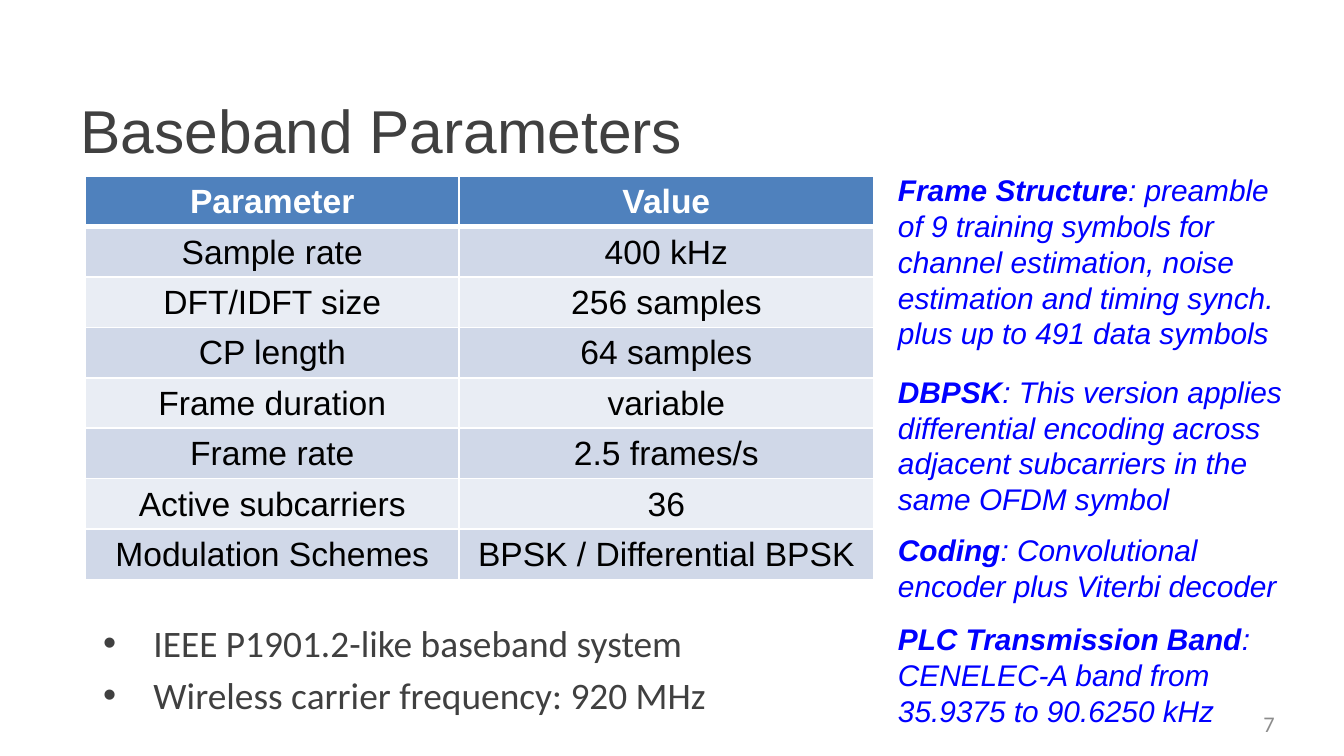
from lxml.etree import SubElement
from pptx import Presentation
from pptx.dml.color import RGBColor
from pptx.enum.text import MSO_ANCHOR as Anchor, MSO_AUTO_SIZE as AutoSize, PP_ALIGN as Align
from pptx.oxml.ns import qn
from pptx.util import Pt

PX = 9525
COLORS = {
    "text": "404040", "note": "0000FF", "number": "8C8C8C", "header": "4F81BD",
    "odd": "D0D8E8", "even": "E9EDF4", "white": "FFFFFF", "black": "000000",
}


class Deck:
    heading_font = "Arial"
    body_font = "Calibri"

    def __init__(self, width, height):
        self.presentation = Presentation()
        self.presentation.slide_width = width * PX
        self.presentation.slide_height = height * PX
        self.slide = self.presentation.slides.add_slide(self.presentation.slide_layouts[1])

    def place(self, shape, box):
        shape.left, shape.top, shape.width, shape.height = (n * PX for n in box)

    def run(self, paragraph, text, size, color, font, bold=False, italic=False):
        run = paragraph.add_run()
        run.text = text
        run.font.size = Pt(size)
        run.font.name = font
        run.font.bold = bold
        run.font.italic = italic
        run.font.color.rgb = RGBColor.from_string(COLORS[color])

    def title(self, text, box):
        heading = self.slide.shapes.title
        self.place(heading, box)
        frame = heading.text_frame
        frame.auto_size = AutoSize.NONE
        frame.vertical_anchor = Anchor.MIDDLE
        frame.paragraphs[0].alignment = Align.LEFT
        self.run(frame.paragraphs[0], text, 32.4, "text", self.heading_font)

    def bullets(self, items, box):
        body = self.slide.placeholders[1]
        self.place(body, box)
        frame = body.text_frame
        frame.auto_size = AutoSize.NONE
        for index, item in enumerate(items):
            paragraph = frame.add_paragraph() if index else frame.paragraphs[0]
            properties = paragraph._p.get_or_add_pPr()
            properties.set("marL", str(36 * PX))
            properties.set("indent", str(-36 * PX))
            SubElement(properties, qn("a:buFont"), typeface="Arial")
            SubElement(properties, qn("a:buChar"), char="•")
            paragraph.space_before = Pt(4 if index else 0)
            self.run(paragraph, item, 20, "text", self.body_font)

    def border(self, cell, side, width):
        line = SubElement(cell._tc.get_or_add_tcPr(), qn(f"a:{side}"), w=str(Pt(width)))
        fill = SubElement(line, qn("a:solidFill"))
        SubElement(fill, qn("a:srgbClr"), val=COLORS["white"])

    def table(self, rows, left, top, widths, row_height):
        frame = self.slide.shapes.add_table(
            len(rows), len(widths), left * PX, top * PX,
            sum(widths) * PX, row_height * len(rows) * PX)
        grid = frame.table
        for column, width in zip(grid.columns, widths):
            column.width = width * PX
        for r, values in enumerate(rows):
            grid.rows[r].height = row_height * PX
            for c, value in enumerate(values):
                self.cell(grid.cell(r, c), value, r)

    def cell(self, cell, value, row):
        header = row == 0
        cell.margin_top, cell.margin_bottom = 5 * PX, 4 * PX
        for side in ("lnL", "lnR", "lnT", "lnB"):
            thick = (header and side == "lnB") or (row == 1 and side == "lnT")
            self.border(cell, side, 3 if thick else 1)
        cell.fill.solid()
        shade = "header" if header else "odd" if row % 2 else "even"
        cell.fill.fore_color.rgb = RGBColor.from_string(COLORS[shade])
        paragraph = cell.text_frame.paragraphs[0]
        paragraph.alignment = Align.CENTER
        self.run(paragraph, value, 18, "white" if header else "black",
                 self.heading_font, bold=header)

    def text_box(self, box):
        frame = self.slide.shapes.add_textbox(*(n * PX for n in box)).text_frame
        frame.word_wrap = True
        return frame

    def note(self, term, explanation, box):
        paragraph = self.text_box(box).paragraphs[0]
        self.run(paragraph, term, 16, "note", self.heading_font, bold=True, italic=True)
        self.run(paragraph, explanation, 16, "note", self.heading_font, italic=True)

    def page_number(self, number, box):
        frame = self.text_box(box)
        frame.vertical_anchor = Anchor.MIDDLE
        frame.paragraphs[0].alignment = Align.RIGHT
        self.run(frame.paragraphs[0], number, 12, "number", self.body_font)


PARAMETERS = [
    ("Parameter", "Value"),
    ("Sample rate", "400 kHz"),
    ("DFT/IDFT size", "256 samples"),
    ("CP length", "64 samples"),
    ("Frame duration", "variable"),
    ("Frame rate", "2.5 frames/s"),
    ("Active subcarriers", "36"),
    ("Modulation Schemes", "BPSK / Differential BPSK"),
]
NOTES = [
    ("Frame Structure", ": preamble of 9 training symbols for channel estimation, "
     "noise estimation and timing synch. plus up to 491 data symbols", 118, 139),
    ("DBPSK", ": This version applies differential encoding across adjacent "
     "subcarriers in the same OFDM symbol", 262, 113),
    ("Coding", ": Convolutional encoder plus Viterbi decoder", 375, 61),
    ("PLC Transmission Band", ": CENELEC-A band from 35.9375 to 90.6250 kHz", 439, 87),
]


def main():
    deck = Deck(960, 540)
    deck.title("Baseband Parameters", (48, 62, 864, 61))
    deck.bullets(["IEEE P1901.2-like baseband system", "Wireless carrier frequency: 920 MHz"],
                 (64, 438, 464, 94))
    deck.table(PARAMETERS, 61, 126, (267, 296), 36)
    deck.page_number("7", (704, 502, 216, 29))
    for term, explanation, top, height in NOTES:
        deck.note(term, explanation, (632, top, 296, height))
    deck.presentation.save("out.pptx")


if __name__ == "__main__":
    main()
